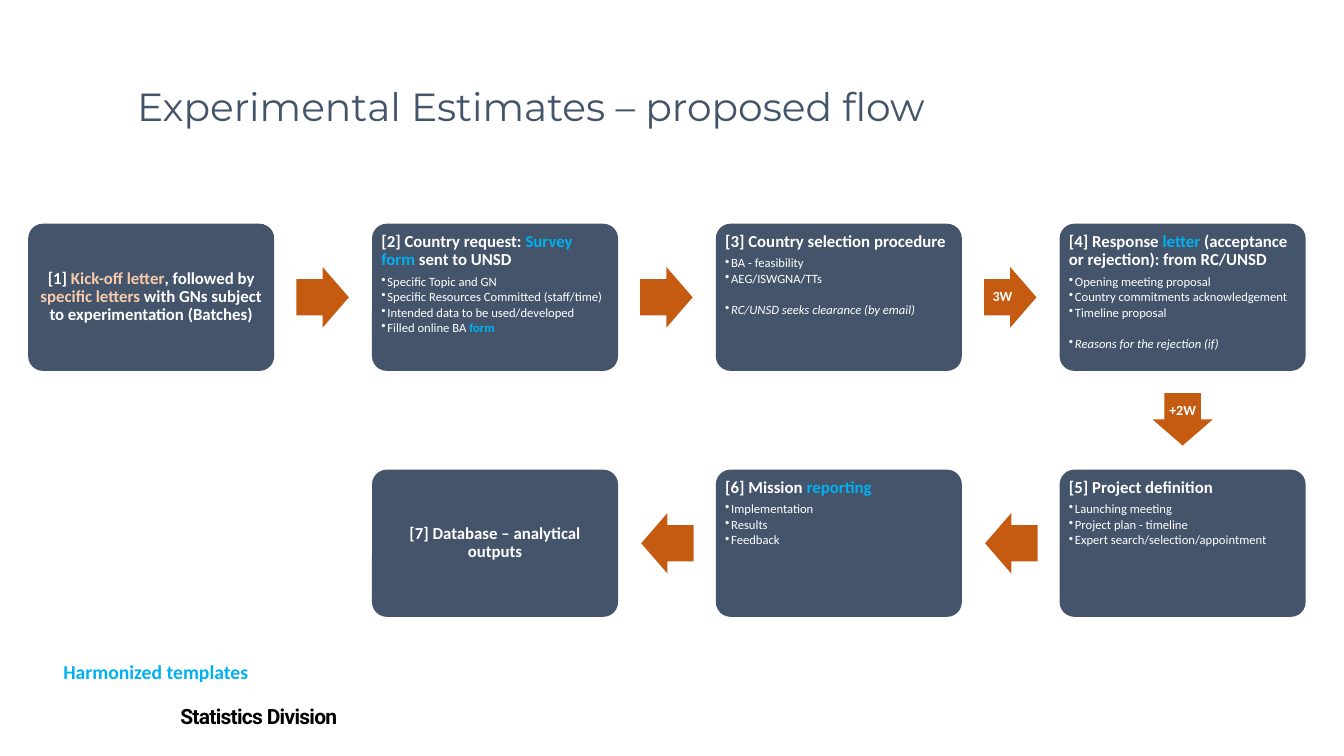
from pptx import Presentation
from pptx.dml.color import RGBColor
from pptx.enum.shapes import MSO_SHAPE
from pptx.enum.text import MSO_ANCHOR, PP_ALIGN
from pptx.util import Inches, Pt
from lxml.etree import SubElement
from pptx.oxml.ns import qn

SLATE = RGBColor(0x44, 0x54, 0x6A)
ORANGE = RGBColor(0xC5, 0x5A, 0x11)
PEACH = RGBColor(0xF8, 0xCB, 0xAD)
SKY = RGBColor(0x00, 0xB0, 0xF0)
WHITE = RGBColor(0xFF, 0xFF, 0xFF)
BLACK = RGBColor(0x00, 0x00, 0x00)

LEFT, COLUMN = 0.28, 3.41
TOP, ROW = 2.22, 2.44
STEP_WIDTH, STEP_HEIGHT = 2.44, 1.46
ARROW_LENGTH, ARROW_BREADTH = 0.52, 0.6
ARROW_GAP = 0.22

prs = Presentation()
prs.slide_width, prs.slide_height = Inches(13.33), Inches(7.5)
slide = prs.slides.add_slide(prs.slide_layouts[6])


def add_block(kind, box, fill, inset):
    block = slide.shapes.add_shape(kind, *map(Inches, box))
    block.shadow.inherit = False
    block.fill.solid()
    block.fill.fore_color.rgb = fill
    block.line.fill.background()
    frame = block.text_frame
    frame.margin_left = frame.margin_right = Inches(inset)
    frame.margin_top = frame.margin_bottom = Inches(inset)
    return block


def write(paragraph, runs, size, font="Calibri", bold=False, italic=False):
    for text, color in runs:
        run = paragraph.add_run()
        run.text = text
        run.font.name, run.font.size = font, Pt(size)
        run.font.bold, run.font.italic = bold or color == SKY, italic
        run.font.color.rgb = color


steps = [
    (0, 0, [("[1] ", WHITE), ("Kick-off letter", PEACH), (", followed by ", WHITE),
            ("specific letters", PEACH),
            (" with GNs subject to experimentation (Batches)", WHITE)], [], ""),
    (1, 0, [("[2] Country request: ", WHITE), ("Survey form", SKY), (" sent to UNSD", WHITE)],
     [[("Specific Topic and GN", WHITE)],
      [("Specific Resources Committed (staff/time)", WHITE)],
      [("Intended data to be used/developed", WHITE)],
      [("Filled online BA ", WHITE), ("form", SKY)]], ""),
    (2, 0, [("[3] Country selection procedure", WHITE)],
     [[("BA - feasibility", WHITE)], [("AEG/ISWGNA/TTs", WHITE)]],
     "RC/UNSD seeks clearance (by email)"),
    (3, 0, [("[4] Response ", WHITE), ("letter", SKY),
            (" (acceptance or rejection): from RC/UNSD", WHITE)],
     [[("Opening meeting proposal", WHITE)],
      [("Country commitments acknowledgement", WHITE)],
      [("Timeline proposal", WHITE)]],
     "Reasons for the rejection (if)"),
    (3, 1, [("[5] Project definition", WHITE)],
     [[("Launching meeting", WHITE)], [("Project plan - timeline", WHITE)],
      [("Expert search/selection/appointment", WHITE)]], ""),
    (2, 1, [("[6] Mission ", WHITE), ("reporting", SKY)],
     [[("Implementation", WHITE)], [("Results", WHITE)], [("Feedback", WHITE)]], ""),
    (1, 1, [("[7] Database – analytical outputs", WHITE)], [], ""),
]
for column, row, heading, details, closing in steps:
    box = (LEFT + column * COLUMN, TOP + row * ROW, STEP_WIDTH, STEP_HEIGHT)
    step = add_block(MSO_SHAPE.ROUNDED_RECTANGLE, box, SLATE, 0.05)
    step.adjustments[0] = 0.1
    frame = step.text_frame
    frame.word_wrap = True
    frame.vertical_anchor = MSO_ANCHOR.TOP if details else MSO_ANCHOR.MIDDLE
    title_line = frame.paragraphs[0]
    title_line.alignment = PP_ALIGN.LEFT if details else PP_ALIGN.CENTER
    title_line.line_spacing, title_line.space_after = 0.9, Pt(4.2)
    write(title_line, heading, 12, bold=True)
    for detail in details + ([[(closing, WHITE)]] if closing else []):
        is_closing = detail[0][0] == closing
        line = frame.add_paragraph()
        line.level, line.alignment = 1, PP_ALIGN.LEFT
        line.line_spacing, line.space_after = 0.9, Pt(1.35)
        line.space_before = Pt(11 if is_closing else 0)
        properties = line._p.get_or_add_pPr()
        properties.set("marL", str(Inches(0.06)))
        properties.set("indent", str(-Inches(0.06)))
        SubElement(properties, qn("a:buChar")).set("char", "•")
        write(line, detail, 9, italic=is_closing)

arrow_top = TOP + (STEP_HEIGHT - ARROW_BREADTH) / 2
forward = LEFT + STEP_WIDTH + ARROW_GAP
backward = LEFT + COLUMN - ARROW_GAP - ARROW_LENGTH
across = (ARROW_LENGTH, ARROW_BREADTH)
arrows = [(MSO_SHAPE.RIGHT_ARROW, forward + column * COLUMN, arrow_top, across, label)
          for column, label in enumerate(["", "", "3W"])]
arrows.append((MSO_SHAPE.DOWN_ARROW,
               LEFT + 3 * COLUMN + (STEP_WIDTH - ARROW_BREADTH) / 2,
               TOP + STEP_HEIGHT + ARROW_GAP, across[::-1], "+2W"))
arrows += [(MSO_SHAPE.LEFT_ARROW, backward + column * COLUMN, arrow_top + ROW, across, "")
           for column in (2, 1)]
for kind, left, top, size, label in arrows:
    arrow = add_block(kind, (left, top, *size), ORANGE, 0)
    arrow.adjustments[0], arrow.adjustments[1] = 0.6, 0.5
    if label:
        arrow.text_frame.word_wrap = False
        arrow.text_frame.vertical_anchor = MSO_ANCHOR.MIDDLE
        duration = arrow.text_frame.paragraphs[0]
        duration.alignment, duration.line_spacing = PP_ALIGN.CENTER, 0.9
        write(duration, [(label, WHITE)], 10, bold=True)

captions = [
    ("Experimental Estimates – proposed flow", (1.36, 0.54, 10.62, 1.07), 28, "Montserrat", SLATE),
    ("Harmonized templates", (0.53, 6.5, 2.2, 0.34), 14, "Calibri", SKY),
    ("Statistics Division", (1.69, 6.93, 5.84, 0.35), 15, "Roboto", BLACK),
]
for text, box, size, font, color in captions:
    frame = slide.shapes.add_textbox(*map(Inches, box)).text_frame
    frame.word_wrap = True
    caption = frame.paragraphs[0]
    write(caption, [(text, color)], size, font, bold=color != SLATE)
    if color == SLATE:
        frame.vertical_anchor = MSO_ANCHOR.MIDDLE
        frame.margin_left = frame.margin_right = frame.margin_top = frame.margin_bottom = 0
        caption.line_spacing = 0.9
    if color == BLACK:
        caption.runs[0].font._element.set("spc", "-50")

prs.save("out.pptx")
